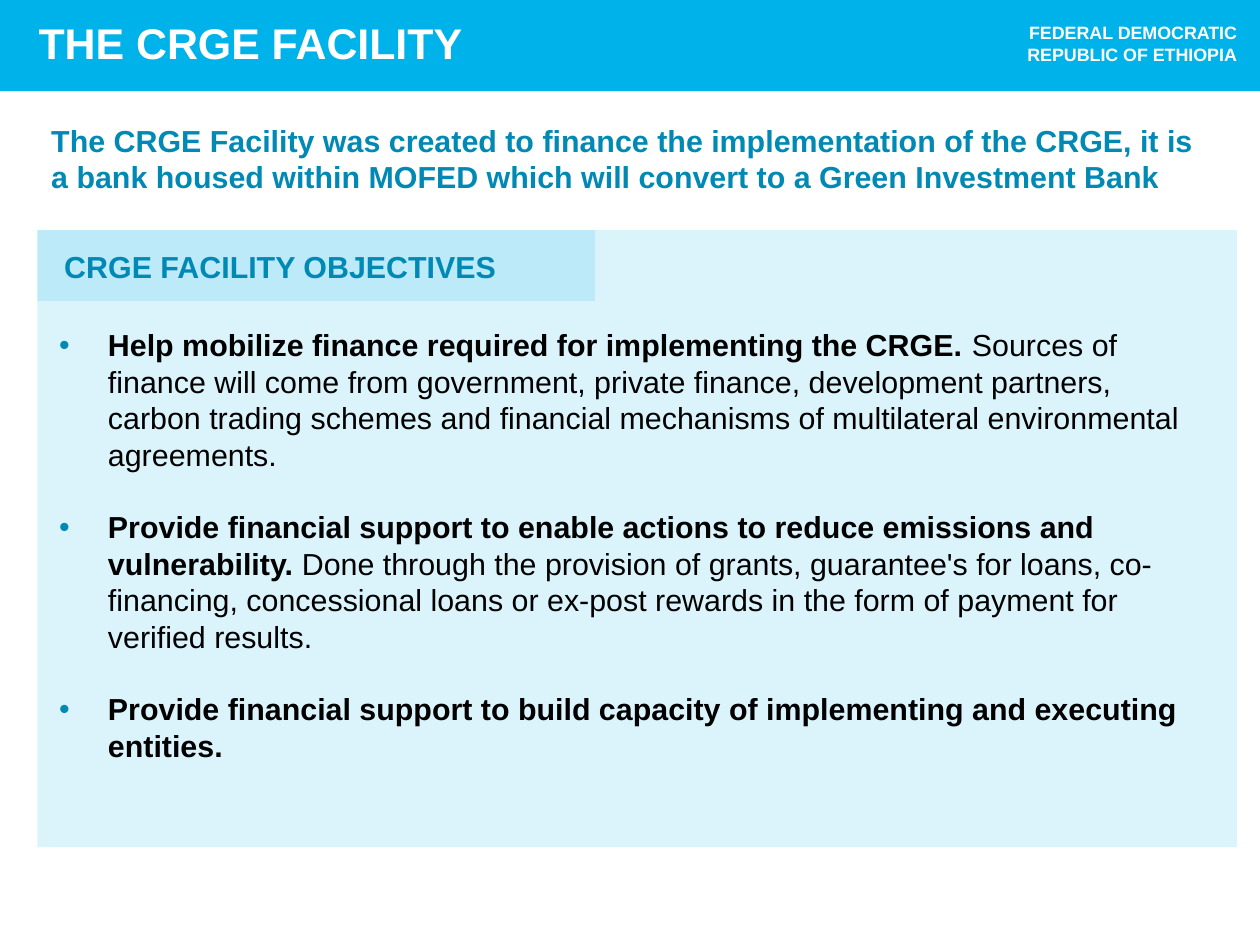
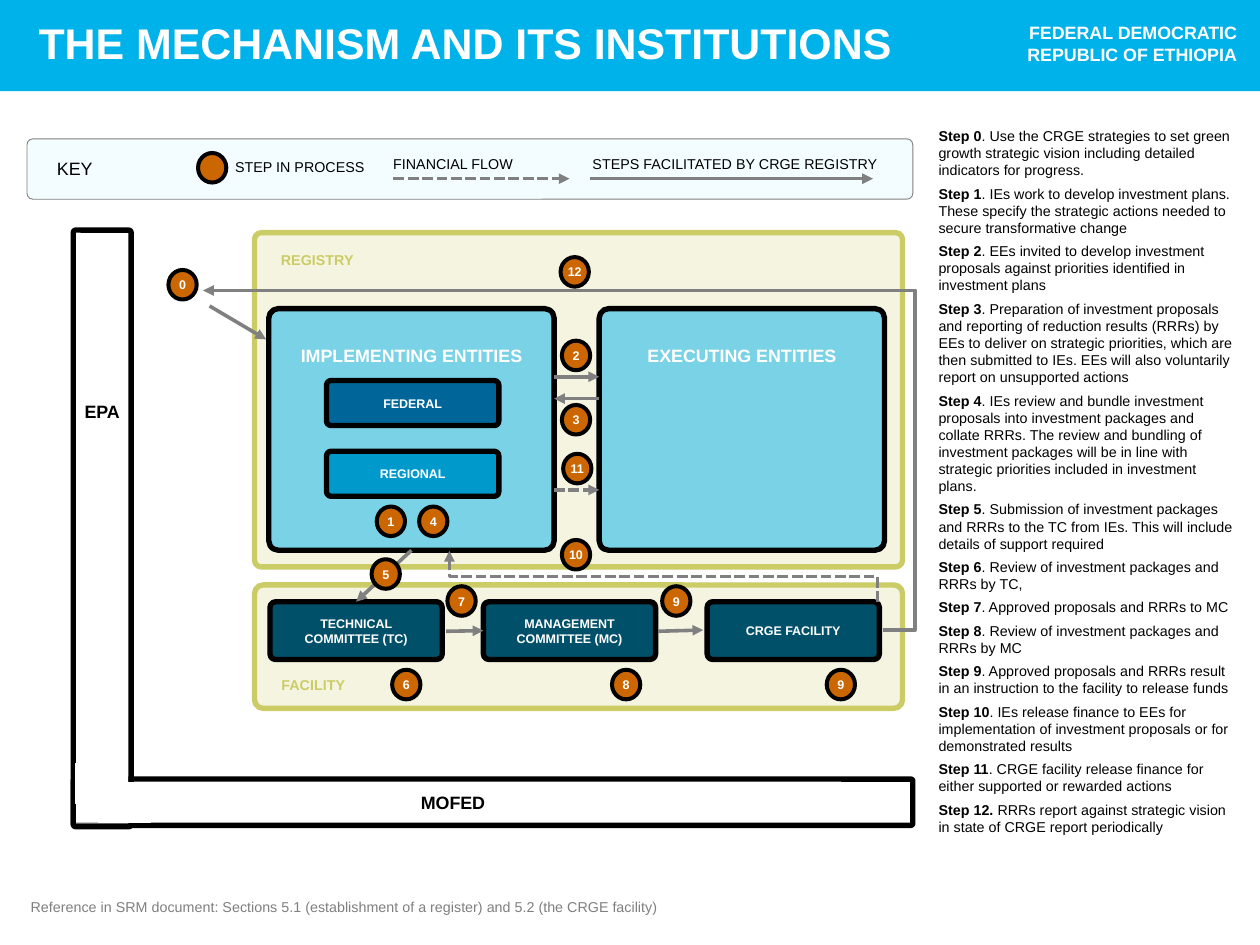
"""Build the two CRGE facility slides."""
from dataclasses import dataclass
from typing import Optional, Sequence

from lxml.etree import SubElement
from pptx import Presentation
from pptx.dml.color import RGBColor
from pptx.enum.dml import MSO_LINE
from pptx.enum.shapes import MSO_CONNECTOR, MSO_SHAPE
from pptx.enum.text import MSO_ANCHOR, PP_ALIGN
from pptx.oxml.ns import qn
from pptx.shapes.autoshape import Shape
from pptx.shapes.connector import Connector
from pptx.slide import Slide
from pptx.util import Emu, Pt

FONT = "Arial"
WHITE = RGBColor(0xFF, 0xFF, 0xFF)
BLACK = RGBColor(0x00, 0x00, 0x00)
GREY = RGBColor(0x80, 0x80, 0x80)
NOTE_GREY = RGBColor(0x7F, 0x7F, 0x7F)
SKY = RGBColor(0x00, 0xB2, 0xEA)
TEAL = RGBColor(0x00, 0x89, 0xB4)
ICE = RGBColor(0xE1, 0xF8, 0xFF)
OLIVE = RGBColor(0xCC, 0xCC, 0x66)
ORANGE = RGBColor(0xCC, 0x66, 0x00)
FEDERAL_BLUE = RGBColor(0x00, 0x66, 0x99)
REGIONAL_BLUE = RGBColor(0x00, 0x99, 0xCC)
DEEP_TEAL = RGBColor(0x00, 0x50, 0x6A)

RECT, ROUND, OVAL = MSO_SHAPE.RECTANGLE, MSO_SHAPE.ROUNDED_RECTANGLE, MSO_SHAPE.OVAL
LEFT, CENTER, RIGHT = PP_ALIGN.LEFT, PP_ALIGN.CENTER, PP_ALIGN.RIGHT
TOP, MIDDLE, BOTTOM = MSO_ANCHOR.TOP, MSO_ANCHOR.MIDDLE, MSO_ANCHOR.BOTTOM

Area = tuple[int, int, int, int]
NO_INSETS: Area = (0, 0, 0, 0)
TEXT_INSETS: Area = (10, 5, 10, 5)

OBJECTIVES = [
    ("Help mobilize finance required for implementing the CRGE. ",
     "Sources of finance will come from government, private finance, development partners, "
     "carbon trading schemes and financial mechanisms of multilateral environmental agreements."),
    ("Provide financial support to enable actions to reduce emissions and vulnerability. ",
     "Done through the provision of grants, guarantee's for loans, co-financing, concessional "
     "loans or ex-post rewards in the form of payment for verified results."),
    ("Provide financial support to build capacity of implementing and executing entities.", ""),
]
STEPS = [
    ("Step 0", ". Use the CRGE strategies to set green growth strategic vision including "
               "detailed indicators for progress."),
    ("Step 1", ". IEs work to develop investment plans. These specify the strategic actions "
               "needed to secure transformative change"),
    ("Step 2", ". EEs invited to develop investment proposals against priorities identified in "
               "investment plans"),
    ("Step 3", ". Preparation of investment proposals and reporting of reduction results (RRRs) "
               "by EEs to deliver on strategic priorities, which are then submitted to IEs. EEs "
               "will also voluntarily report on unsupported actions"),
    ("Step 4", ". IEs review and bundle investment proposals into investment packages and "
               "collate RRRs. The review and bundling of investment packages will be in line "
               "with strategic priorities included in investment plans."),
    ("Step 5", ". Submission of investment packages and RRRs to the TC from IEs. This will "
               "include details of support required"),
    ("Step 6", ". Review of investment packages and RRRs by TC,"),
    ("Step 7", ". Approved proposals and RRRs to MC"),
    ("Step 8", ". Review of investment packages and RRRs by MC"),
    ("Step 9", ". Approved proposals and RRRs result in an instruction to the facility to "
               "release funds"),
    ("Step 10", ". IEs release finance to EEs for implementation of investment proposals or for "
                "demonstrated results"),
    ("Step 11", ". CRGE facility release finance for either supported or rewarded actions"),
    ("Step 12. ", "RRRs report against strategic vision in state of CRGE report periodically"),
]


@dataclass(frozen=True)
class TextStyle:
    """Type, alignment and insets of a text."""
    size: int
    color: RGBColor = BLACK
    bold: bool = False
    align: PP_ALIGN = LEFT
    anchor: MSO_ANCHOR = TOP
    insets: Area = TEXT_INSETS


@dataclass(frozen=True)
class Box:
    """A filled shape that may hold a label."""
    area: Area
    fill: RGBColor
    alpha: int = 100
    line: Optional[RGBColor] = None
    weight: float = 3
    kind: MSO_SHAPE = ROUND
    corner: float = 0.04
    label: str = ""
    style: Optional[TextStyle] = None


@dataclass(frozen=True)
class Arrow:
    """An arrow, straight or bent."""
    start: tuple[int, int]
    end: tuple[int, int]
    dashed: bool = False
    bend: Optional[int] = None
    turn: int = 0


ENTITY = TextStyle(10, WHITE, True, CENTER, TOP, (10, 26, 10, 5))
UNIT = TextStyle(7, WHITE, True, CENTER, MIDDLE)
NUMBER = TextStyle(7, WHITE, True, CENTER, MIDDLE, NO_INSETS)
CAPTION = TextStyle(8)

BACKDROP = [
    Box((57, 606, 653, 36), WHITE, 39, BLACK, label="MOFED",
        style=TextStyle(10, BLACK, True, LEFT, MIDDLE, (270, 5, 10, 5))),
    Box((198, 181, 504, 260), OLIVE, 20, OLIVE, corner=0.02, label="REGISTRY",
        style=TextStyle(8, OLIVE, True, insets=(19, 13, 10, 5))),
    Box((198, 455, 504, 96), OLIVE, 20, OLIVE, corner=0.07, label="FACILITY",
        style=TextStyle(8, OLIVE, True, insets=(19, 69, 10, 5))),
    Box((21, 108, 689, 47), ICE, 39, GREY, 0.5, corner=0.1, label="KEY",
        style=TextStyle(10, insets=(22, 13, 10, 5))),
    Box((57, 179, 45, 464), WHITE, 39, BLACK, label="EPA",
        style=TextStyle(10, BLACK, True, CENTER, TOP, (0, 132, 0, 0))),
    Box((59, 594, 40, 31), WHITE, line=WHITE, weight=0.75, kind=RECT),
    Box((77, 609, 40, 31), WHITE, line=WHITE, weight=0.75, kind=RECT),
]
ENTITIES = [
    Box((x, 240, 222, 188), SKY, 50, BLACK, label=label, style=ENTITY)
    for x, label in ((209, "IMPLEMENTING ENTITIES"), (466, "EXECUTING ENTITIES"))
]
LEVELS = [
    Box((254, y, 134, 35), fill, line=BLACK, corner=0.1, label=label, style=UNIT)
    for y, fill, label in ((296, FEDERAL_BLUE, "FEDERAL"), (351, REGIONAL_BLUE, "REGIONAL"))
]
BODIES = [
    Box((x, 468, 134, 45), DEEP_TEAL, line=BLACK, corner=0.1, label=label, style=UNIT)
    for x, label in ((210, "TECHNICAL COMMITTEE (TC)"), (376, "MANAGEMENT COMMITTEE (MC)"),
                     (550, "CRGE FACILITY"))
]
ARROWS = [
    Arrow((163, 238), (207, 264)),
    Arrow((431, 293), (466, 293)),
    Arrow((466, 310), (431, 310)),
    Arrow((431, 381), (466, 381), dashed=True),
    Arrow((512, 491), (547, 490)),
    Arrow((459, 139), (679, 139)),
    Arrow((306, 139), (443, 139), dashed=True),
    Arrow((496, 615), (536, 282), dashed=True, bend=50000, turn=270),
    Arrow((687, 490), (158, 226), bend=-4700),
]
MARKERS = [
    ("", 154, 119), ("0", 131, 210), ("1", 293, 394), ("2", 437, 265), ("3", 437, 315),
    ("4", 326, 394), ("5", 289, 435), ("6", 305, 521), ("7", 348, 456), ("8", 476, 521),
    ("9", 515, 456), ("9", 643, 521), ("10", 437, 420), ("11", 438, 353), ("12", 436, 200),
]
KEY_CAPTIONS = [
    ("STEP IN PROCESS", (173, 118, 130, 24)),
    ("FINANCIAL FLOW", (296, 116, 150, 24)),
    ("STEPS FACILITATED BY CRGE REGISTRY", (451, 116, 255, 24)),
]


def px(n: int) -> Emu:
    """Turn px, a hundredth of an inch, into EMU."""
    return Emu(n * 9144)


def set_frame(sp: Shape, style: TextStyle) -> None:
    """Set wrapping, anchor and insets of a shape's text."""
    tf = sp.text_frame
    tf.word_wrap = True
    tf.vertical_anchor = style.anchor
    tf.margin_left, tf.margin_top, tf.margin_right, tf.margin_bottom = map(px, style.insets)


def format_runs(sp: Shape, style: TextStyle) -> None:
    """Give every run of a shape the type of the style."""
    for p in sp.text_frame.paragraphs:
        p.alignment = style.align
        for r in p.runs:
            r.font.name = FONT
            r.font.size = Pt(style.size)
            r.font.color.rgb = style.color
            if r.font.bold is None:
                r.font.bold = style.bold


def write(sp: Shape, text: str, style: TextStyle) -> None:
    """Write one paragraph into a shape."""
    set_frame(sp, style)
    sp.text_frame.text = text
    format_runs(sp, style)


def write_list(sp: Shape, items: Sequence[tuple[str, str]], style: TextStyle,
               gap: float, bulleted: bool = False) -> None:
    """Write paragraphs that open in bold, with a gap between them."""
    set_frame(sp, style)
    tf = sp.text_frame
    for i, (lead, rest) in enumerate(items):
        p = tf.add_paragraph() if i else tf.paragraphs[0]
        p.space_before = Pt(gap if i else 0)
        for text, bold in ((lead, True), (rest, False)):
            if text:
                r = p.add_run()
                r.text = text
                r.font.bold = bold
        if bulleted:
            add_bullet(p._p.get_or_add_pPr())
    format_runs(sp, style)


def add_bullet(pPr) -> None:
    """Give a paragraph a teal bullet and a hanging indent."""
    pPr.set("marL", str(px(38)))
    pPr.set("indent", str(px(-38)))
    SubElement(SubElement(pPr, qn("a:buClr")), qn("a:srgbClr")).set("val", str(TEAL))
    SubElement(pPr, qn("a:buFont")).set("typeface", FONT)
    SubElement(pPr, qn("a:buChar")).set("char", "•")


def add_text(s: Slide, area: Area, text: str, style: TextStyle) -> Shape:
    """Add a text box."""
    sp = s.shapes.add_textbox(*map(px, area))
    write(sp, text, style)
    return sp


def add_box(s: Slide, box: Box) -> Shape:
    """Add a box with its label."""
    sp = s.shapes.add_shape(box.kind, *map(px, box.area))
    sp.shadow.inherit = False
    sp.fill.solid()
    sp.fill.fore_color.rgb = box.fill
    if box.alpha < 100:
        color = sp.element.spPr.find(qn("a:solidFill"))[0]
        SubElement(color, qn("a:alpha")).set("val", str(box.alpha * 1000))
    if box.line is None:
        sp.line.fill.background()
    else:
        sp.line.color.rgb = box.line
        sp.line.width = Pt(box.weight)
    if box.kind == ROUND:
        sp.adjustments[0] = box.corner
    if box.style:
        write(sp, box.label, box.style)
    return sp


def add_arrow(s: Slide, arrow: Arrow) -> Connector:
    """Add a grey arrow."""
    kind = MSO_CONNECTOR.STRAIGHT if arrow.bend is None else MSO_CONNECTOR.ELBOW
    c = s.shapes.add_connector(kind, *map(px, arrow.start + arrow.end))
    c.line.color.rgb = GREY
    c.line.width = Pt(2)
    if arrow.dashed:
        c.line.dash_style = MSO_LINE.SQUARE_DOT
    spPr = c.element.spPr
    SubElement(spPr.find(qn("a:ln")), qn("a:tailEnd")).set("type", "triangle")
    SubElement(spPr, qn("a:effectLst"))
    if arrow.turn:
        spPr.find(qn("a:xfrm")).set("rot", str(arrow.turn * 60000))
    if arrow.bend is not None:
        guide = SubElement(spPr.find(qn("a:prstGeom")).find(qn("a:avLst")), qn("a:gd"))
        guide.set("name", "adj1")
        guide.set("fmla", f"val {arrow.bend}")
    return c


def add_slide(prs: Presentation, title: str) -> Slide:
    """Add a blank slide with the title band."""
    s = prs.slides.add_slide(prs.slide_layouts[6])
    add_box(s, Box((0, 0, 980, 71), SKY, kind=RECT))
    add_text(s, (30, 13, 783, 40), title,
             TextStyle(24, WHITE, True, anchor=BOTTOM, insets=NO_INSETS))
    add_text(s, (734, 17, 228, 50), "FEDERAL DEMOCRATIC REPUBLIC OF ETHIOPIA",
             TextStyle(10, WHITE, True, RIGHT, insets=NO_INSETS))
    return s


def build_facility(prs: Presentation) -> None:
    """Build the slide on the facility's objectives."""
    s = add_slide(prs, "THE CRGE FACILITY")
    add_text(s, (30, 90, 925, 57),
             "The CRGE Facility was created to finance the implementation of the CRGE, it is a "
             "bank housed within MOFED which will convert to a Green Investment Bank",
             TextStyle(17, TEAL, True))
    panel = add_box(s, Box((29, 179, 933, 480), SKY, 14, kind=RECT))
    write_list(panel, OBJECTIVES, TextStyle(17, insets=(17, 75, 41, 5)), 20.25, bulleted=True)
    add_box(s, Box((29, 179, 434, 55), SKY, 14, kind=RECT, label="CRGE FACILITY OBJECTIVES",
                   style=TextStyle(17, TEAL, True, insets=(21, 14, 10, 5))))


def build_mechanism(prs: Presentation) -> None:
    """Build the slide on the mechanism and its institutions."""
    s = add_slide(prs, "THE MECHANISM AND ITS INSTITUTIONS")
    for box in BACKDROP:
        add_box(s, box)
    implementing, _ = [add_box(s, box) for box in ENTITIES]
    for box in LEVELS:
        add_box(s, box)
    technical, management, _ = [add_box(s, box) for box in BODIES]
    for arrow in ARROWS:
        add_arrow(s, arrow)
    submission = add_arrow(s, Arrow((320, 428), (277, 468)))
    submission.begin_connect(implementing, 2)
    submission.end_connect(technical, 0)
    add_arrow(s, Arrow((347, 491), (376, 491))).end_connect(management, 1)
    for number, x, y in MARKERS:
        add_box(s, Box((x, y, 22, 23), ORANGE, line=BLACK, weight=2.25, kind=OVAL,
                       label=number, style=NUMBER if number else None)).text_frame.word_wrap = False
    for text, area in KEY_CAPTIONS:
        add_text(s, area, text, CAPTION)
    steps = s.shapes.add_textbox(*map(px, (716, 92, 260, 575)))
    write_list(steps, STEPS, TextStyle(8, insets=(14, 7, 14, 7)), 3.5)
    add_text(s, (14, 694, 590, 24), "Reference in SRM document: Sections 5.1 (establishment of "
             "a register) and 5.2 (the CRGE facility)", TextStyle(8, NOTE_GREY))


def main() -> None:
    """Build and save the presentation."""
    prs = Presentation()
    prs.slide_width, prs.slide_height = px(980), px(735)
    build_facility(prs)
    build_mechanism(prs)
    prs.save("out.pptx")


if __name__ == "__main__":
    main()
